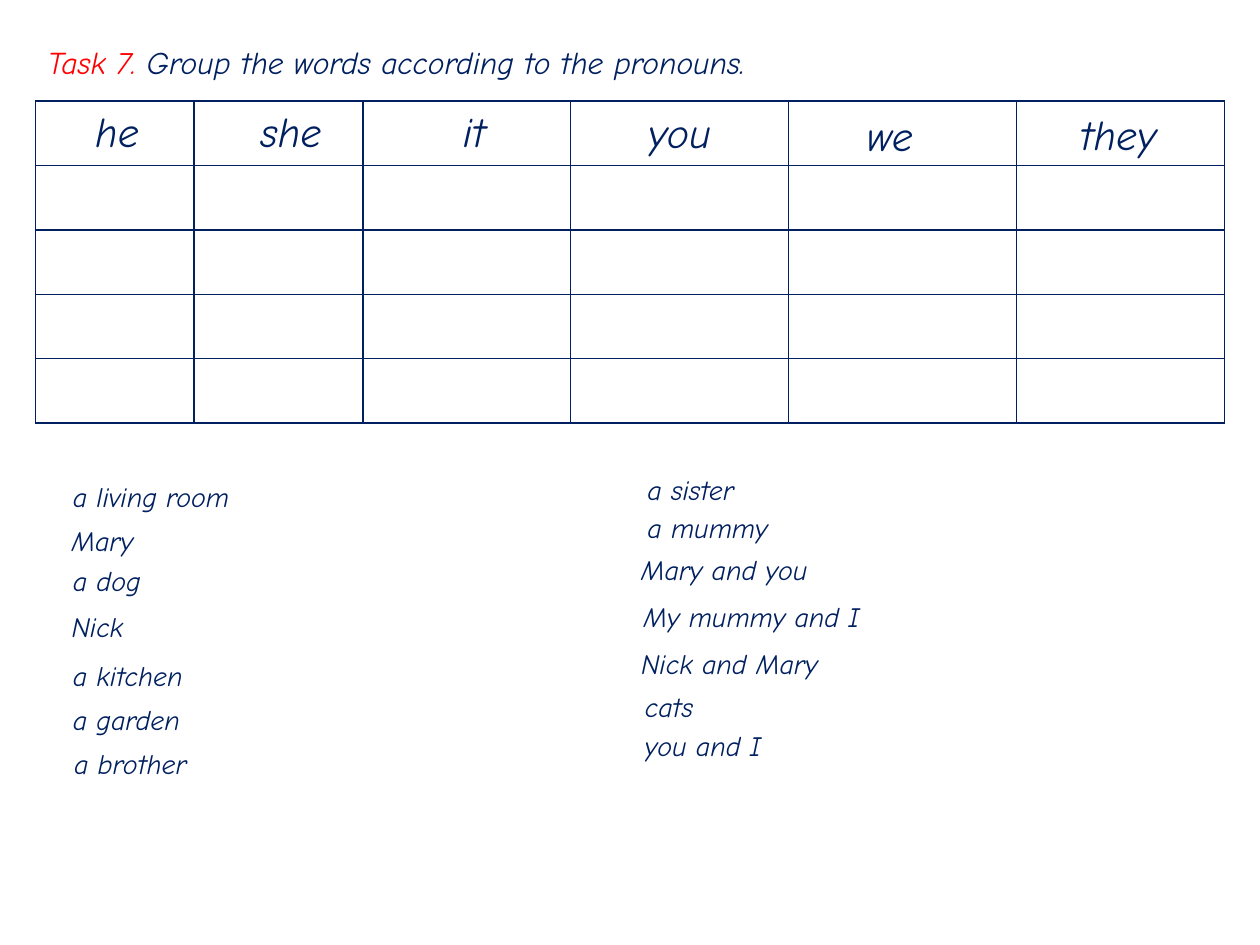
from dataclasses import dataclass

from lxml.etree import SubElement
from pptx import Presentation
from pptx.dml.color import RGBColor
from pptx.enum.text import MSO_AUTO_SIZE as AutoSize, PP_ALIGN as Align
from pptx.oxml.ns import qn
from pptx.util import Inches, Length, Pt

NAVY = RGBColor(0x00, 0x20, 0x60)
RED = RGBColor(0xFF, 0x00, 0x00)
WHITE = RGBColor(0xFF, 0xFF, 0xFF)
FONT = "Comic Neue"

# The slide is a grid of 100 columns by 75 rows of square units.
UNIT = Inches(0.1)
GRID_COLS, GRID_ROWS = 100, 75

TABLE_LEFT, TABLE_TOP = 2.8, 8
COL_WIDTHS = (12.6, 13.4, 16.5, 17.3, 18.1, 16.5)
ROW_COUNT, ROW_HEIGHT = 5, 5.12
TITLE_HEIGHT, HEADING_HEIGHT, WORD_HEIGHT = 4, 5, 3.7


@dataclass(frozen=True)
class Label:
    text: str
    col: float
    row: float
    width: float


TITLE = Label("Task 7.| Group the words according to the pronouns.", 2.8, 2.9, 94.5)

HEADINGS = (
    Label("he ", 5.3, 7.9, 9.1),
    Label("she ", 18.4, 7.9, 10.5),
    Label("it ", 34.4, 7.9, 7.6),
    Label("you ", 50.4, 8, 8.2),
    Label("we ", 65.9, 8.2, 10.6),
    Label("they ", 82.9, 8.1, 12.8),
)

WORDS = (
    Label("a living room", 4.8, 37.6, 15),
    Label("Mary", 4.7, 41.1, 14.1),
    Label("a dog", 4.8, 44.2, 14.1),
    Label("Nick", 4.7, 47.9, 13.7),
    Label("a kitchen", 4.8, 51.8, 15),
    Label("a garden", 4.8, 55.3, 15),
    Label("a brother", 4.9, 58.8, 13.9),
    Label("a sister", 50.4, 37, 13.9),
    Label("a mummy", 50.4, 40, 13.9),
    Label("Mary and you", 49.9, 43.4, 24.3),
    Label("My mummy and I", 50.1, 47.1, 19.6),
    Label("Nick and Mary", 49.9, 50.8, 19.6),
    Label("cats", 50.2, 54.2, 19.3),
    Label("you and I", 50.2, 57.3, 17.3),
)


def units(n: float) -> Length:
    return Length(round(n * UNIT))


def add_label(slide, label: Label, height: float, size: int,
              align=Align.LEFT, colors=(NAVY,)) -> None:
    """Add a text box; "|" in the text starts the run of the next colour."""
    box = (label.col, label.row, label.width, height)
    tf = slide.shapes.add_textbox(*map(units, box)).text_frame
    tf.word_wrap = True
    tf.auto_size = AutoSize.SHAPE_TO_FIT_TEXT
    p = tf.paragraphs[0]
    p.alignment = align
    for text, color in zip(label.text.split("|"), colors):
        r = p.add_run()
        r.text = text
        for name, value in {"name": FONT, "size": Pt(size), "italic": True}.items():
            setattr(r.font, name, value)
        r.font.color.rgb = color


def set_borders(cell, color: RGBColor, width: Length) -> None:
    """Line all four sides; the schema wants the lines before the fill."""
    tc_pr = cell._tc.get_or_add_tcPr()
    for side in ("lnL", "lnR", "lnT", "lnB"):
        ln = SubElement(tc_pr, qn(f"a:{side}"), w=str(width))
        fill = SubElement(ln, qn("a:solidFill"))
        SubElement(fill, qn("a:srgbClr"), val=str(color))


def add_answer_table(slide) -> None:
    box = (TABLE_LEFT, TABLE_TOP, sum(COL_WIDTHS), ROW_COUNT * ROW_HEIGHT)
    table = slide.shapes.add_table(
        ROW_COUNT, len(COL_WIDTHS), *map(units, box)).table
    for name in ("first_row", "horz_banding"):
        setattr(table, name, False)
    for column, width in zip(table.columns, COL_WIDTHS):
        column.width = units(width)
    for cell in table.iter_cells():
        set_borders(cell, NAVY, Pt(1))
        cell.fill.solid()
        cell.fill.fore_color.rgb = WHITE


def main() -> None:
    prs = Presentation()
    prs.slide_width, prs.slide_height = units(GRID_COLS), units(GRID_ROWS)
    slide = prs.slides.add_slide(prs.slide_layouts[6])
    add_label(slide, TITLE, TITLE_HEIGHT, 18, colors=(RED, NAVY))
    add_answer_table(slide)
    for heading in HEADINGS:
        add_label(slide, heading, HEADING_HEIGHT, 24, Align.CENTER)
    for word in WORDS:
        add_label(slide, word, WORD_HEIGHT, 16)
    prs.save("out.pptx")


if __name__ == "__main__":
    main()
